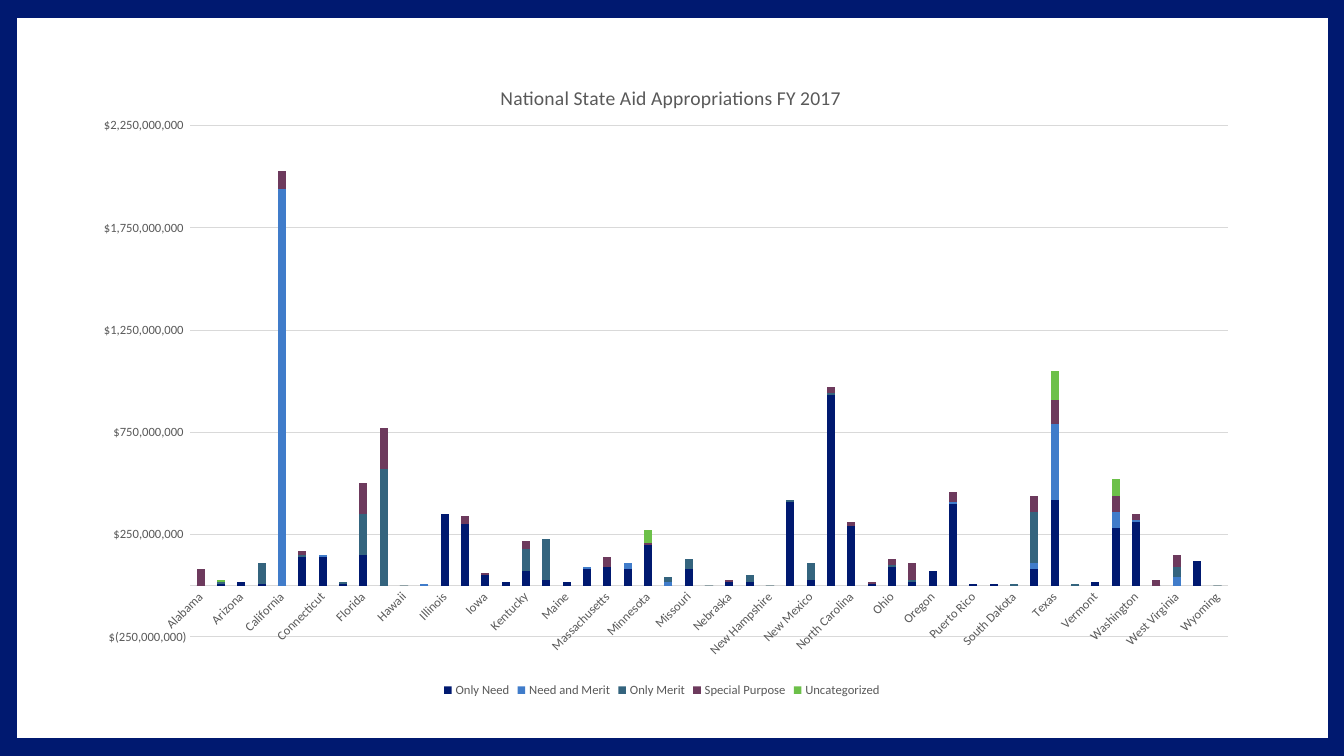
"""Build the slide with stacked state aid appropriations for fiscal year 2017."""
from dataclasses import dataclass

from lxml.etree import SubElement
from pptx import Presentation
from pptx.chart.axis import CategoryAxis, ValueAxis
from pptx.chart.chart import Chart
from pptx.chart.data import CategoryChartData
from pptx.dml.color import RGBColor
from pptx.enum.chart import XL_CHART_TYPE, XL_LEGEND_POSITION, XL_TICK_MARK
from pptx.enum.shapes import MSO_SHAPE
from pptx.oxml.ns import qn
from pptx.slide import Slide
from pptx.text.text import Font
from pptx.util import Inches, Pt

NAVY = RGBColor(0x00, 0x19, 0x70)
BLUE = RGBColor(0x40, 0x7C, 0xCA)
TEAL = RGBColor(0x34, 0x64, 0x7E)
PLUM = RGBColor(0x6D, 0x3A, 0x5D)
GREEN = RGBColor(0x6C, 0xC0, 0x49)
GREY = RGBColor(0x59, 0x59, 0x59)
RULE = RGBColor(0xD9, 0xD9, 0xD9)
WHITE = RGBColor(0xFF, 0xFF, 0xFF)
MILLION = 1_000_000


@dataclass(frozen=True)
class AidType:
    """A kind of aid, with the states that spend each amount in millions."""
    name: str
    color: RGBColor
    states_by_millions: dict[int, str]

    def dollars(self) -> list[int]:
        """Return the dollars of every state, zero where none are listed."""
        spent = {state: millions * MILLION
                 for millions, states in self.states_by_millions.items()
                 for state in states.split("; ")}
        return [spent.get(state, 0) for state in STATES]


STATES = (
    "Alabama", "Alaska", "Arizona", "Arkansas", "California", "Colorado",
    "Connecticut", "Delaware", "Florida", "Georgia", "Hawaii", "Idaho",
    "Illinois", "Indiana", "Iowa", "Kansas", "Kentucky", "Louisiana", "Maine",
    "Maryland", "Massachusetts", "Michigan", "Minnesota", "Mississippi",
    "Missouri", "Montana", "Nebraska", "Nevada", "New Hampshire", "New Jersey",
    "New Mexico", "New York", "North Carolina", "North Dakota", "Ohio",
    "Oklahoma", "Oregon", "Pennsylvania", "Puerto Rico", "Rhode Island",
    "South Dakota", "Tennessee", "Texas", "Utah", "Vermont", "Virginia",
    "Washington", "Washington, DC", "West Virginia", "Wisconsin", "Wyoming",
)
AID_TYPES = (
    AidType("Only Need", NAVY, {
        10: "Alaska; Arkansas; Delaware; North Dakota; Puerto Rico; Rhode Island",
        20: "Arizona; Kansas; Maine; Nebraska; Nevada; Oklahoma; Vermont",
        30: "Louisiana; New Mexico", 50: "Iowa", 70: "Kentucky; Oregon",
        80: "Maryland; Michigan; Missouri; Tennessee",
        90: "Massachusetts; Ohio", 120: "Wisconsin",
        140: "Colorado; Connecticut", 150: "Florida", 200: "Minnesota",
        280: "Virginia", 290: "North Carolina", 300: "Indiana",
        310: "Washington", 350: "Illinois", 400: "Pennsylvania",
        410: "New Jersey", 420: "Texas", 930: "New York"}),
    AidType("Need and Merit", BLUE, {
        10: "Connecticut; Idaho; Maryland; Pennsylvania; Washington",
        20: "Mississippi", 30: "Michigan; Tennessee", 40: "West Virginia",
        80: "Virginia", 370: "Texas", 1940: "California"}),
    AidType("Only Merit", TEAL, {
        10: "Alaska; Colorado; Delaware; New Jersey; New York; Ohio; "
            "Oklahoma; South Dakota; Utah",
        20: "Mississippi", 30: "Nevada", 50: "Missouri; West Virginia",
        80: "New Mexico", 100: "Arkansas", 110: "Kentucky",
        200: "Florida; Louisiana", 250: "Tennessee", 570: "Georgia"}),
    AidType("Special Purpose", PLUM, {
        10: "Iowa; Minnesota; Nebraska; North Dakota",
        20: "Colorado; North Carolina",
        30: "New York; Ohio; Washington; Washington, DC",
        40: "Indiana; Kentucky", 50: "Massachusetts; Pennsylvania",
        60: "West Virginia", 80: "Alabama; Oklahoma; Tennessee; Virginia",
        90: "California", 120: "Texas", 150: "Florida", 200: "Georgia"}),
    AidType("Uncategorized", GREEN, {
        10: "Alaska", 60: "Minnesota", 80: "Virginia", 140: "Texas"}),
)


def style_font(font: Font, size: int) -> None:
    """Give chart text its face, size and colour."""
    font.name = "Calibri"
    font.size = Pt(size)
    font.bold = False
    font.color.rgb = GREY


def place(parent, **settings: str | float) -> None:
    """Position a chart part by fractions of the chart area."""
    layout = parent.find(qn("c:layout"))
    if layout is None:
        layout = SubElement(parent, qn("c:layout"))
        text = parent.find(qn("c:tx"))
        parent.insert(0 if text is None else parent.index(text) + 1, layout)
    manual = SubElement(layout, qn("c:manualLayout"))
    for tag, value in settings.items():
        SubElement(manual, qn(f"c:{tag}")).set("val", str(value))


def add_panel(slide: Slide) -> None:
    """Draw the white panel inside the navy frame."""
    panel = slide.shapes.add_shape(
        MSO_SHAPE.ROUNDED_RECTANGLE,
        Inches(0.17), Inches(0.18), Inches(13), Inches(7.14))
    panel.adjustments[0] = 0
    panel.shadow.inherit = False
    panel.fill.solid()
    panel.fill.fore_color.rgb = WHITE
    panel.line.fill.background()


def style_axis(axis: CategoryAxis | ValueAxis) -> None:
    """Apply the settings both axes share."""
    axis.major_tick_mark = XL_TICK_MARK.NONE
    axis.minor_tick_mark = XL_TICK_MARK.NONE
    style_font(axis.tick_labels.font, 9)


def style_axes(chart: Chart) -> None:
    """Format the state axis and the dollar axis."""
    states, dollars = chart.category_axis, chart.value_axis
    style_axis(states)
    states.format.line.color.rgb = RULE
    states.format.line.width = Pt(0.75)
    label_text = states._element.find(qn("c:txPr"))
    label_text.find(qn("a:bodyPr")).set("rot", "-2700000")

    style_axis(dollars)
    dollars.minimum_scale = -250 * MILLION
    dollars.maximum_scale = 2250 * MILLION
    dollars.major_unit = 500 * MILLION
    dollars.format.line.fill.background()
    dollars.major_gridlines.format.line.color.rgb = RULE
    dollars.major_gridlines.format.line.width = Pt(0.75)
    dollars.tick_labels.number_format = r'"$"#,##0_);"$"\(#,##0\)'
    dollars.tick_labels.number_format_is_linked = False


def add_aid_chart(slide: Slide) -> None:
    """Add the stacked columns with title and legend."""
    aid = CategoryChartData()
    aid.categories = STATES
    for aid_type in AID_TYPES:
        aid.add_series(aid_type.name, aid_type.dollars())
    chart = slide.shapes.add_chart(
        XL_CHART_TYPE.COLUMN_STACKED, Inches(0.72), Inches(0.54),
        Inches(11.69), Inches(6.42), aid).chart
    style_font(chart.font, 10)

    plot = chart.plots[0]
    plot.gap_width = 150
    plot.overlap = 100
    plot.vary_by_categories = False
    for series, aid_type in zip(plot.series, AID_TYPES):
        series.invert_if_negative = False
        series.format.fill.solid()
        series.format.fill.fore_color.rgb = aid_type.color
    style_axes(chart)

    chart.has_title = True
    heading = chart.chart_title.text_frame
    heading.text = "National State Aid Appropriations FY 2017"
    style_font(heading.paragraphs[0].font, 14)
    chart.has_legend = True
    chart.legend.position = XL_LEGEND_POSITION.BOTTOM
    chart.legend.include_in_layout = False
    style_font(chart.legend.font, 9)

    place(chart.chart_title._element, xMode="edge", yMode="edge", x=0.36, y=0.04)
    place(chart._chartSpace.chart.plotArea, layoutTarget="inner",
          xMode="edge", yMode="edge", x=0.1, y=0.11, w=0.88, h=0.79)


def main() -> None:
    """Assemble and save the slide."""
    presentation = Presentation()
    presentation.slide_width = Inches(13.33)
    presentation.slide_height = Inches(7.5)
    slide = presentation.slides.add_slide(presentation.slide_layouts[6])
    slide.background.fill.solid()
    slide.background.fill.fore_color.rgb = NAVY
    add_panel(slide)
    add_aid_chart(slide)
    presentation.save("out.pptx")


if __name__ == "__main__":
    main()
